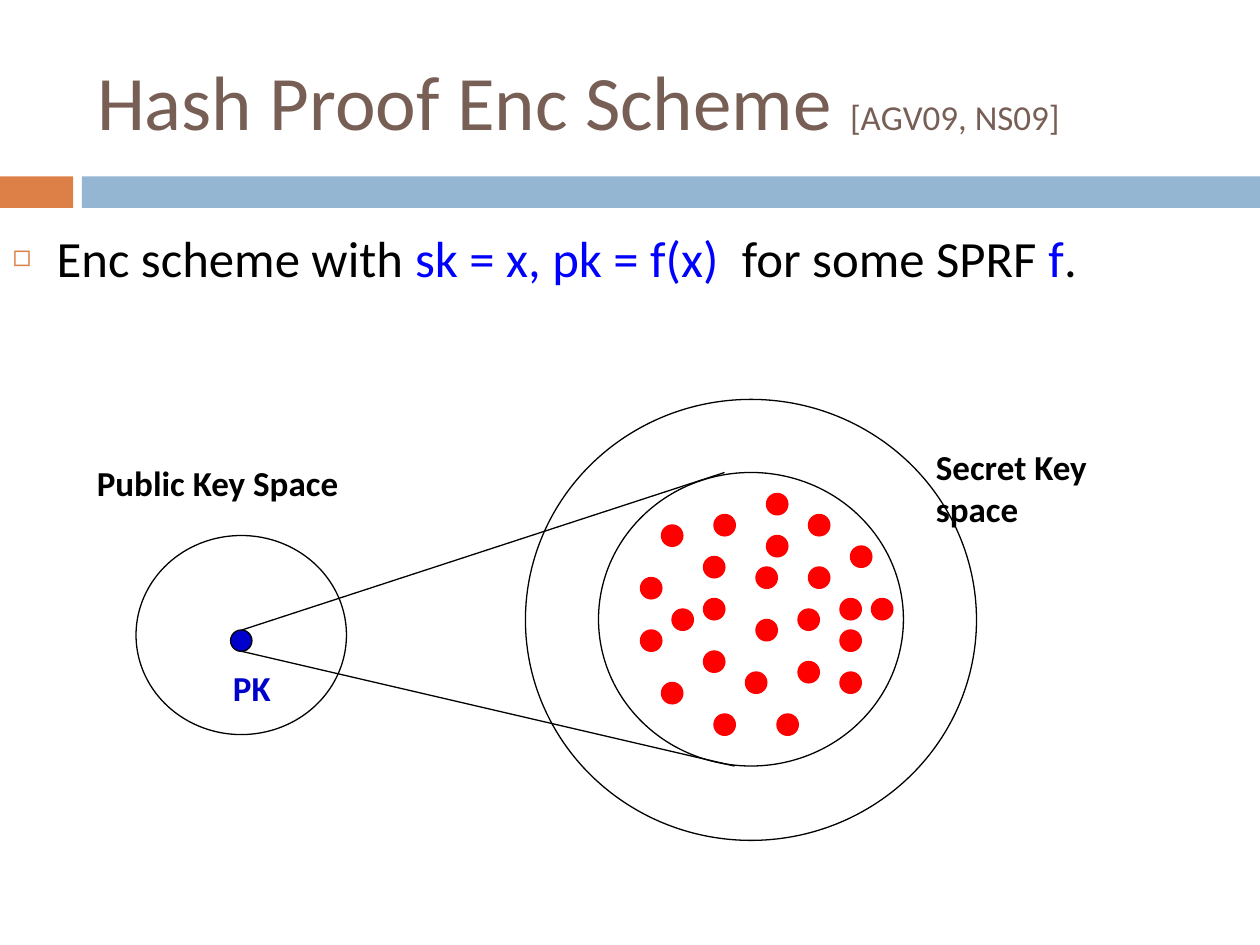
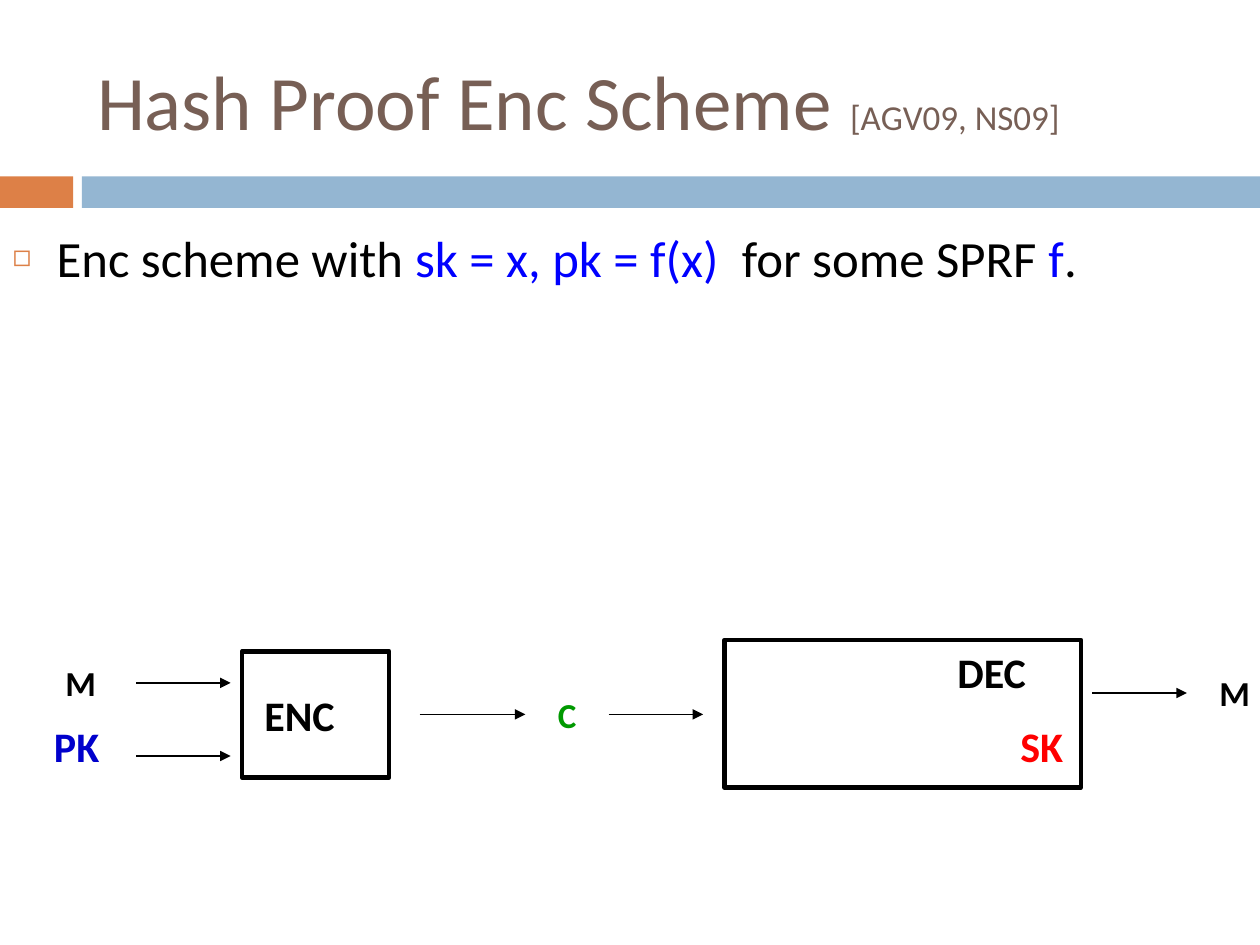
from dataclasses import dataclass

from lxml import etree
from pptx import Presentation
from pptx import util as u
from pptx.dml.color import RGBColor
from pptx.enum import shapes, text
from pptx.oxml import ns

IN = u.Inches
OVAL, RECT = shapes.MSO_SHAPE.OVAL, shapes.MSO_SHAPE.RECTANGLE
MIDDLE, TOP = text.MSO_ANCHOR.MIDDLE, text.MSO_ANCHOR.TOP


@dataclass(frozen=True)
class Theme:
    font: str = "Calibri"
    title: str = "775F55"
    accent: str = "DD8047"
    band: str = "94B6D2"
    ink: str = "000000"
    paper: str = "FFFFFF"
    formula: str = "0000FF"
    public: str = "0000CC"
    secret: str = "FF0000"
    cipher: str = "009900"
    title_size: int = 44
    body_size: int = 29
    box_size: int = 24
    label_size: int = 20
    thin: float = 0.75
    thick: float = 2.5


THEME = Theme()


def rgb(value):
    return RGBColor.from_string(value)


def add_xml(parent, tag, **attrs):
    return etree.SubElement(parent, ns.qn(tag), attrs)


def write(tf, *runs, size, color, bold=False, anchor=MIDDLE):
    """Fill a frame with runs; each is a string or (string, format changes)."""
    tf.word_wrap = True
    tf.auto_size = text.MSO_AUTO_SIZE.NONE
    tf.vertical_anchor = anchor
    p = tf.paragraphs[0]
    p.alignment = text.PP_ALIGN.LEFT
    for run in runs:
        words, changes = (run, {}) if isinstance(run, str) else run
        r = p.add_run()
        r.text = words
        r.font.name = THEME.font
        r.font.bold = bold
        r.font.size = u.Pt(changes.get("size", size))
        r.font.color.rgb = rgb(changes.get("color", color))
    return p


class Deck:
    def __init__(self, theme):
        self.theme = theme
        self.prs = Presentation()
        self.prs.slide_width, self.prs.slide_height = IN(10), IN(7.5)
        self.s = None

    def new_slide(self):
        """Start a slide with the shared bands, title and opening bullet."""
        t = self.theme
        self.s = self.prs.slides.add_slide(self.prs.slide_layouts[1])
        self.shape(RECT, 0, 1.4, 0.58, 0.25, fill=t.accent)
        self.shape(RECT, 0.65, 1.4, 9.35, 0.25, fill=t.band)
        self.title("Hash Proof Enc Scheme ",
                   ("[AGV09, NS09]", {"size": t.label_size}))
        blue = {"color": t.formula}
        self.bullet("Enc scheme with ", ("sk = x, pk = f(x)  ", blue),
                    "for some SPRF ", ("f", blue), ".")

    def place(self, sp, x, y, w, h):
        sp.left, sp.top, sp.width, sp.height = IN(x), IN(y), IN(w), IN(h)

    def title(self, *runs):
        sp = self.s.shapes.title
        self.place(sp, 0.67, 0.25, 8.92, 1.08)
        write(sp.text_frame, *runs,
              size=self.theme.title_size, color=self.theme.title)

    def bullet(self, *runs):
        sp = self.s.placeholders[1]
        self.place(sp, 0, 1.75, 9.83, 5.75)
        p = write(sp.text_frame, *runs, size=self.theme.body_size,
                  color=self.theme.ink, anchor=TOP)
        p.space_before = u.Pt(7)
        pPr = p._p.get_or_add_pPr()
        pPr.set("marL", str(IN(0.35)))
        pPr.set("indent", str(-IN(0.35)))
        add_xml(add_xml(pPr, "a:buClr"), "a:srgbClr", val=self.theme.accent)
        add_xml(pPr, "a:buSzPct", val="60000")
        add_xml(pPr, "a:buChar", char="◻")

    def shape(self, kind, x, y, w, h, fill=None, line=None, width=THEME.thin):
        sp = self.s.shapes.add_shape(kind, IN(x), IN(y), IN(w), IN(h))
        sp.shadow.inherit = False
        if fill:
            sp.fill.solid()
            sp.fill.fore_color.rgb = rgb(fill)
        else:
            sp.fill.background()
        if line:
            sp.line.color.rgb = rgb(line)
            sp.line.width = u.Pt(width)
        else:
            sp.line.fill.background()

    def circle(self, x, y, w, h):
        self.shape(OVAL, x, y, w, h, line=self.theme.ink)

    def dot(self, x, y, fill, line):
        self.shape(OVAL, x, y, 0.17, 0.17, fill=fill, line=line)

    def box(self, x, y, w, h):
        self.shape(RECT, x, y, w, h, fill=self.theme.paper,
                   line=self.theme.ink, width=self.theme.thick)

    def label(self, words, x, y, w, h=0.5, size=THEME.label_size,
              color=THEME.ink):
        sp = self.s.shapes.add_textbox(IN(x), IN(y), IN(w), IN(h))
        write(sp.text_frame, words, size=size, color=color, bold=True)

    def line(self, x1, y1, x2, y2, arrow=False):
        c = self.s.shapes.add_connector(
            shapes.MSO_CONNECTOR.STRAIGHT, IN(x1), IN(y1), IN(x2), IN(y2))
        c.line.color.rgb = rgb(self.theme.ink)
        c.line.width = u.Pt(self.theme.thin)
        if arrow:
            add_xml(c.line._get_or_add_ln(), "a:tailEnd", type="triangle")
        add_xml(c._element.spPr, "a:effectLst")


# Left and top of each secret key, in twelfths of an inch
SECRET_KEYS = [
    (63, 50), (68, 49), (67, 53), (73, 51), (72, 54), (73, 47), (61, 55),
    (67, 57), (61, 60), (72, 59), (67, 62), (63, 65), (68, 68), (71, 64),
    (74, 68), (76, 63), (76, 58), (80, 64), (80, 60), (77, 54), (77, 49),
    (81, 52), (83, 57), (80, 57), (64, 58),
]


def key_spaces(deck):
    t = deck.theme
    deck.new_slide()
    deck.dot(1.83, 5, t.public, t.ink)
    deck.label("PK", 1.75, 5.08, 0.75, 0.75, color=t.public)
    deck.circle(1.08, 4.25, 1.67, 1.58)
    deck.label("Public Key Space", 0.67, 3.58, 2.5)
    deck.circle(4.17, 3.17, 3.58, 3.5)
    deck.label("Secret Key space", 7.33, 3.58, 1.83, 0.58)
    deck.line(5.75, 3.75, 1.92, 5)
    deck.line(1.92, 5.17, 5.83, 6.08)
    deck.circle(4.75, 3.75, 2.42, 2.33)
    for x, y in SECRET_KEYS:
        deck.dot(x / 12, y / 12, t.secret, t.secret)


def encryption_flow(deck):
    t = deck.theme
    deck.new_slide()
    deck.box(1.92, 5.17, 1.17, 1)
    deck.box(5.75, 5.08, 2.83, 1.17)
    for x1, x2, y in [(1.08, 1.83, 5.42), (1.08, 1.83, 6), (3.33, 4.17, 5.67),
                      (4.83, 5.58, 5.67), (8.67, 9.42, 5.5)]:
        deck.line(x1, y, x2, y, arrow=True)
    for words, x, y, color in [("M", 0.42, 5.17, t.ink),
                               ("C", 4.33, 5.42, t.cipher),
                               ("M", 9.58, 5.25, t.ink)]:
        deck.label(words, x, y, 0.42, color=color)
    for words, x, y, w, color in [("PK", 0.33, 5.67, 0.75, t.public),
                                  ("ENC", 2, 5.42, 1, t.ink),
                                  ("DEC", 7.5, 5.08, 1, t.ink),
                                  ("SK", 8, 5.67, 0.83, t.secret)]:
        deck.label(words, x, y, w, size=t.box_size, color=color)


def main():
    deck = Deck(THEME)
    key_spaces(deck)
    encryption_flow(deck)
    deck.prs.save("out.pptx")


if __name__ == "__main__":
    main()
